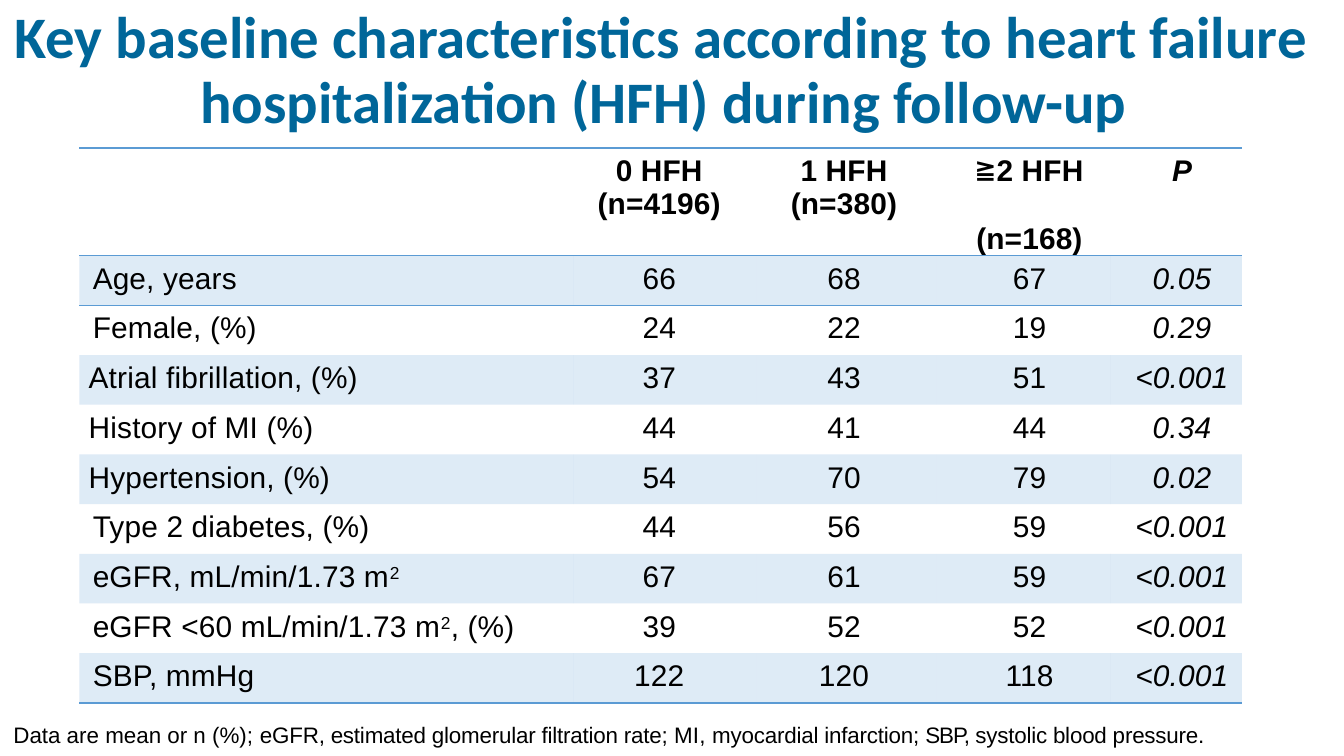
from lxml.etree import SubElement
from pptx import Presentation
from pptx.dml.color import RGBColor
from pptx.enum.text import MSO_ANCHOR, PP_ALIGN as Align
from pptx.oxml import parse_xml
from pptx.oxml.ns import nsdecls, qn
from pptx.util import Inches, Pt

BLACK = RGBColor(0x00, 0x00, 0x00)
TITLE_BLUE = RGBColor(0x00, 0x66, 0x99)
TABLE_BLUE = RGBColor(0x5B, 0x9B, 0xD4)
BAND_OPACITY = 20
NO_STYLE_NO_GRID = "{2D5ABB26-0587-4C30-8999-92F81FD0307C}"

TITLE = ("Key baseline characteristics according to heart failure "
         "hospitalization (HFH) during follow-up")
# Text and letter spacing
FOOTNOTE = [
    ("Data are mean or n (%); ", 0), ("eGFR, estimated glomerular filtration rate; ", -0.1),
    ("MI, ", 0.1), ("myocardial infarction; ", -0.1), ("SBP, ", -0.6),
    ("systolic blood pressure.", -0.1),
]

# Two header lines for each group, with the gap between them in points
GROUPS = [("0 HFH", "(n=4196)", 0), ("1 HFH", "(n=380)", 0), ("≧2 HFH", "(n=168)", 18)]

# Label (superscripts between carets), label indent, three group values, P value
ROWS = [
    ("Age, years", 0.1, "66", "68", "67", "0.05"),
    ("Female, (%)", 0.1, "24", "22", "19", "0.29"),
    ("Atrial fibrillation, (%)", 0.07, "37", "43", "51", "<0.001"),
    ("History of MI (%)", 0.07, "44", "41", "44", "0.34"),
    ("Hypertension, (%)", 0.07, "54", "70", "79", "0.02"),
    ("Type 2 diabetes, (%)", 0.1, "44", "56", "59", "<0.001"),
    ("eGFR, mL/min/1.73 m^2^", 0.1, "67", "61", "59", "<0.001"),
    ("eGFR <60 mL/min/1.73 m^2^, (%)", 0.1, "39", "52", "52", "<0.001"),
    ("SBP, mmHg", 0.1, "122", "120", "118", "<0.001"),
]

COLUMN_WIDTHS = [3.68, 1.36, 1.34, 1.29, 0.98]
# Left and right paragraph margins of the centred columns
COLUMN_MARGINS = [(0, 0.09), (0, 0.04), (0.09, 0), (0.09, 0)]
HEADER_HEIGHT, ROW_HEIGHT = 0.7, 0.37


def add_span(para, text, size, font="Arial", color=BLACK, bold=False, italic=False, spacing=0.1):
    """Add one run; spacing is the letter spacing in points."""
    span = para.add_run()
    span.text = text
    span.font.size, span.font.name = Pt(size), font
    span.font.bold, span.font.italic = bold, italic
    span.font.color.rgb = color
    span.font._element.set("spc", str(round(spacing * 100)))
    return span


def set_margins(para, left=0, right=0, first=0):
    properties = para._p.get_or_add_pPr()
    for name, inches in (("marL", left), ("marR", right), ("indent", first)):
        properties.set(name, str(Inches(inches)))


def set_insets(frame, top):
    frame.margin_left = frame.margin_right = frame.margin_bottom = 0
    frame.margin_top = Inches(top)
    frame.word_wrap = True
    frame.vertical_anchor = MSO_ANCHOR.TOP


def prepare_cell(cell):
    cell.margin_left = cell.margin_right = cell.margin_bottom = 0
    cell.margin_top = Inches(0.05)
    para = cell.text_frame.paragraphs[0]
    para.space_before = Pt(3.5)
    return para


def fill_band(cell):
    cell.fill.solid()
    cell.fill.fore_color.rgb = TABLE_BLUE
    color = cell._tc.tcPr.find(qn("a:solidFill"))[0]
    SubElement(color, qn("a:alpha")).set("val", str(BAND_OPACITY * 1000))


def add_borders(cell, sides):
    """Rule the given sides, a subset of "TB" in that order."""
    properties = cell._tc.get_or_add_tcPr()
    for position, side in enumerate(sides):
        properties.insert(position, parse_xml(
            f'<a:ln{side} {nsdecls("a")} w="{Pt(1)}"><a:solidFill>'
            f'<a:srgbClr val="{TABLE_BLUE}"/></a:solidFill></a:ln{side}>'))


def add_title(slide):
    box = slide.shapes.title
    box.left, box.top, box.width, box.height = map(Inches, (0.09, -0.02, 9.82, 1.03))
    set_insets(box.text_frame, 0.07)
    para = box.text_frame.paragraphs[0]
    para.alignment = Align.LEFT
    para.line_spacing, para.space_before = Pt(34.3), Pt(5.4)
    set_margins(para, left=1.4, first=-1.38)
    add_span(para, TITLE, 31.5, "Calibri", TITLE_BLUE, bold=True, spacing=0)


def add_header(table):
    for column, (name, count, gap) in enumerate(GROUPS, start=1):
        cell = table.cell(0, column)
        top, bottom = prepare_cell(cell), cell.text_frame.add_paragraph()
        bottom.space_before = Pt(gap)
        for para, text in ((top, name), (bottom, count)):
            para.alignment = Align.CENTER
            set_margins(para, *COLUMN_MARGINS[column - 1])
            if text.startswith("≧"):
                add_span(para, "≧", 16, "Cambria", bold=True, spacing=0.5)
                text = text[1:]
            add_span(para, text, 16, bold=True)
    para = prepare_cell(table.cell(0, 4))
    para.alignment = Align.CENTER
    set_margins(para, *COLUMN_MARGINS[-1])
    add_span(para, "P", 16, bold=True, italic=True)


def add_body(table):
    for row, (label, indent, *values) in enumerate(ROWS, start=1):
        para = prepare_cell(table.cell(row, 0))
        set_margins(para, left=indent)
        for index, part in enumerate(label.split("^")):
            if part:
                span = add_span(para, part, 16)
                if index % 2:
                    span.font._element.set("baseline", "26000")
        for column, value in enumerate(values, start=1):
            para = prepare_cell(table.cell(row, column))
            para.alignment = Align.CENTER
            set_margins(para, *COLUMN_MARGINS[column - 1])
            add_span(para, value, 16, italic=column == len(values))


def add_table(slide):
    count = len(ROWS) + 1
    frame = slide.shapes.add_table(
        count, len(COLUMN_WIDTHS), Inches(0.59), Inches(1.1), Inches(sum(COLUMN_WIDTHS)),
        Inches(HEADER_HEIGHT + ROW_HEIGHT * len(ROWS)))
    table = frame.table
    table.first_row = table.horz_banding = False
    table._tbl.tblPr.find(qn("a:tableStyleId")).text = NO_STYLE_NO_GRID
    for column, width in zip(table.columns, COLUMN_WIDTHS):
        column.width = Inches(width)
    borders = {0: "TB", 1: "T", count - 1: "B"}
    for index, row in enumerate(table.rows):
        row.height = Inches(ROW_HEIGHT if index else HEADER_HEIGHT)
        for cell in row.cells:
            if index % 2:
                fill_band(cell)
            add_borders(cell, borders.get(index, ""))
    prepare_cell(table.cell(0, 0))
    add_header(table)
    add_body(table)


def add_footnote(slide):
    box = slide.shapes.add_textbox(*map(Inches, (0.09, 5.36, 9.03, 0.23)))
    set_insets(box.text_frame, 0.01)
    para = box.text_frame.paragraphs[0]
    para.space_before = Pt(1)
    set_margins(para, left=0.01)
    for text, spacing in FOOTNOTE:
        add_span(para, text, 12, spacing=spacing)


def main():
    deck = Presentation()
    deck.slide_width = Inches(10)
    deck.slide_height = deck.slide_width * 9 // 16
    slide = deck.slides.add_slide(deck.slide_layouts[5])
    add_table(slide)
    add_footnote(slide)
    add_title(slide)
    deck.save("out.pptx")


if __name__ == "__main__":
    main()
